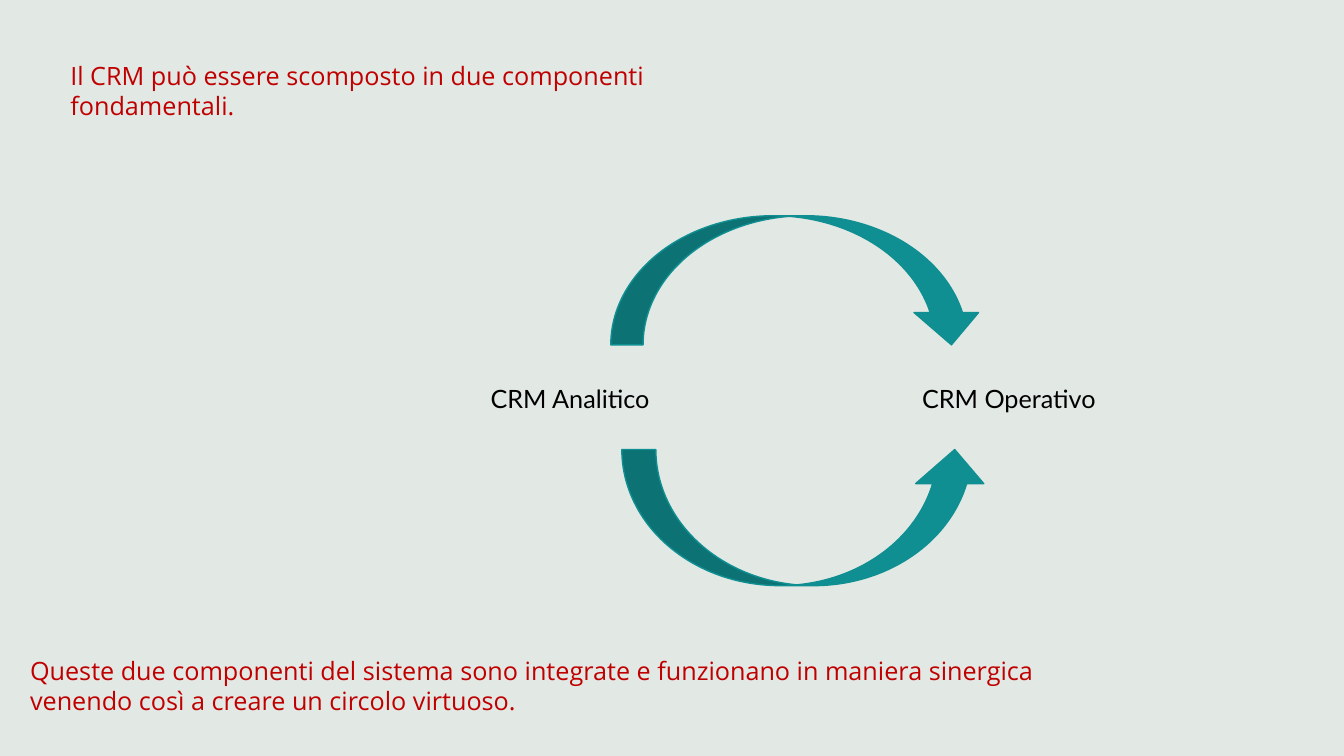
from pptx import Presentation
from pptx.dml.color import RGBColor
from pptx.enum.shapes import MSO_SHAPE
from pptx.util import Pt

DOWN_ARROW = MSO_SHAPE.CURVED_DOWN_ARROW
UP_ARROW = MSO_SHAPE.CURVED_UP_ARROW

# Content: text, style, (left, top, width, height) in points
TEXTS = [
    ("Il CRM può essere scomposto in due componenti fondamentali.",
     "statement", (43.2, 39.6, 480.2, 51)),
    ("CRM Analitico", "label", (343.4, 270, 165.6, 29)),
    ("CRM Operativo", "label", (651.6, 270, 172.8, 51)),
    ("Queste due componenti del sistema sono integrate e funzionano in maniera "
     "sinergica venendo così a creare un circolo virtuoso.",
     "statement", (14.4, 464.4, 794.9, 51)),
]
CYCLE_ARROWS = [
    (DOWN_ARROW, (436.3, 154.1, 266.4, 92.2)),
    (UP_ARROW, (444.2, 321.1, 262.1, 97.2)),
]

THEME = {
    "background": RGBColor.from_string("E2E8E4"),
    "arrow": RGBColor.from_string("108F92"),
    "statement": ("Open Sans", RGBColor.from_string("C00000")),
    "label": ("Lato", RGBColor.from_string("000000")),
    "text_size": Pt(18),
    "line_width": Pt(1),
}


def place(frame):
    return [Pt(length) for length in frame]


def add_text(page, text, style, frame):
    box = page.shapes.add_textbox(*place(frame))
    box.text_frame.word_wrap = True
    para = box.text_frame.paragraphs[0]
    para.text = text
    font = para.runs[0].font
    font.name, font.color.rgb = THEME[style]
    font.size = THEME["text_size"]


def add_arrow(page, kind, frame):
    arrow = page.shapes.add_shape(kind, *place(frame))
    arrow.shadow.inherit = False
    arrow.fill.solid()
    arrow.fill.fore_color.rgb = THEME["arrow"]
    arrow.line.color.rgb = THEME["arrow"]
    arrow.line.width = THEME["line_width"]


def main():
    deck = Presentation()
    deck.slide_width, deck.slide_height = Pt(960), Pt(540)
    page = deck.slides.add_slide(deck.slide_layouts[6])

    # Background
    page.background.fill.solid()
    page.background.fill.fore_color.rgb = THEME["background"]

    # Cycle between the two components
    for kind, frame in CYCLE_ARROWS:
        add_arrow(page, kind, frame)

    # Statements and labels
    for text, style, frame in TEXTS:
        add_text(page, text, style, frame)

    deck.save("out.pptx")


if __name__ == "__main__":
    main()
